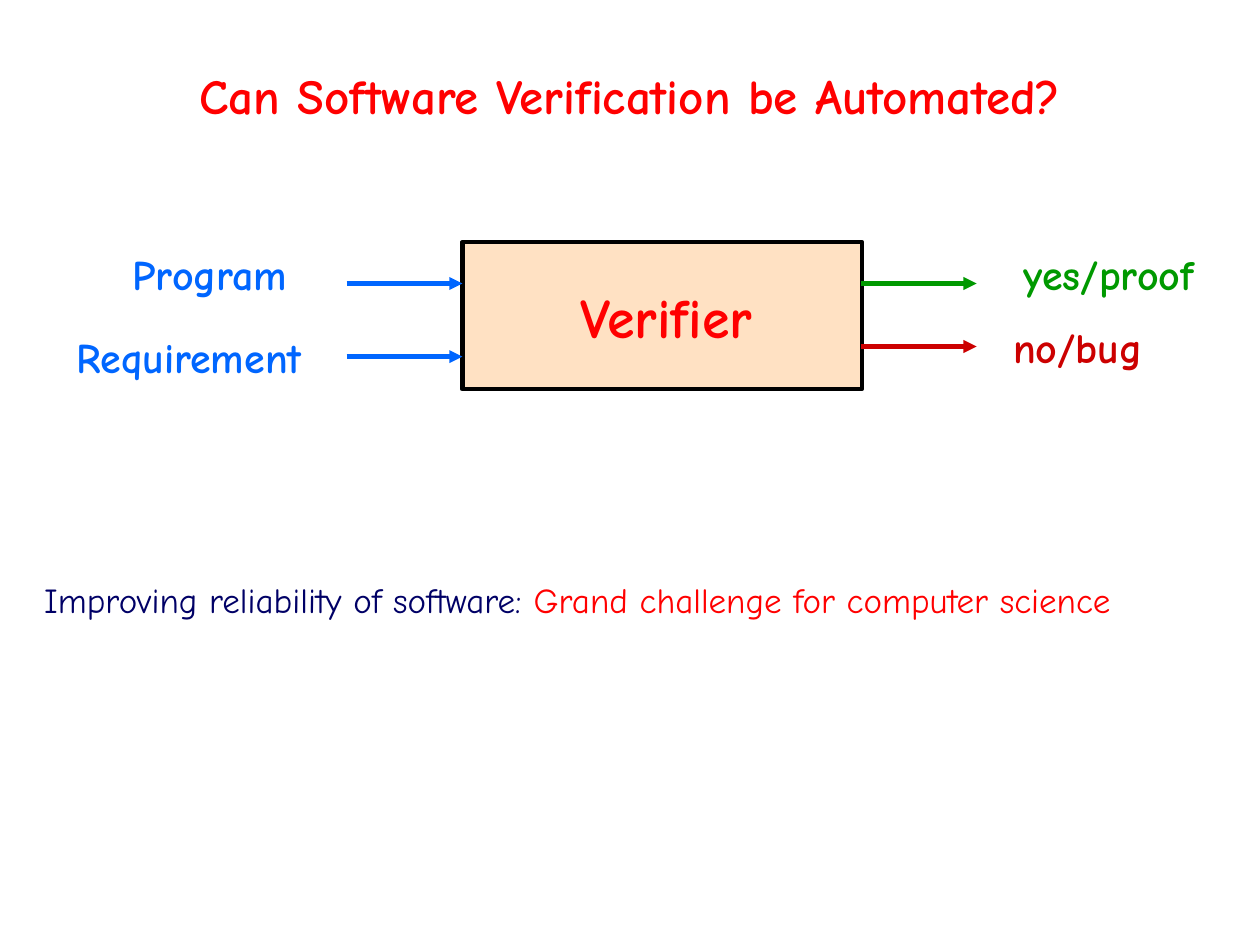
"""Build the slide that shows a verifier with its inputs and outputs."""
from lxml import etree
from pptx import Presentation
from pptx.dml.color import RGBColor
from pptx.enum.shapes import MSO_CONNECTOR, MSO_SHAPE
from pptx.enum.text import MSO_ANCHOR, MSO_AUTO_SIZE, PP_ALIGN
from pptx.oxml.ns import qn
from pptx.util import Inches, Pt

RECTANGLE = MSO_SHAPE.RECTANGLE
STRAIGHT = MSO_CONNECTOR.STRAIGHT
MIDDLE, TOP = MSO_ANCHOR.MIDDLE, MSO_ANCHOR.TOP
CENTER, LEFT = PP_ALIGN.CENTER, PP_ALIGN.LEFT
NO_FIT, GROW = MSO_AUTO_SIZE.NONE, MSO_AUTO_SIZE.SHAPE_TO_FIT_TEXT

FONT = "Comic Neue"
RED = RGBColor(0xFF, 0x00, 0x00)
BLUE = RGBColor(0x00, 0x66, 0xFF)
GREEN = RGBColor(0x00, 0x99, 0x00)
DARK_RED = RGBColor(0xCC, 0x00, 0x00)
NAVY = RGBColor(0x00, 0x00, 0x66)
PEACH = RGBColor(0xFF, 0xCC, 0x99)
BLACK = RGBColor(0x00, 0x00, 0x00)

HEADING = "Can Software Verification be Automated?"
VERIFIER = "Verifier"
CLAIM = [
    ("Improving reliability of software: ", NAVY),
    ("Grand challenge for computer science", RED),
]
VERIFIER_AREA = (3.67, 1.92, 3.17, 1.17)
LINE_WIDTH = Pt(2.5)
ARROW_LENGTH = 0.92
INPUT_X, OUTPUT_X = 2.75, 6.83
LABEL_HEIGHT = 0.5
FLOWS = [
    ("Program", BLUE, 0.92, 1.92, 1.49, INPUT_X, 2.25),
    ("Requirement", BLUE, 0.42, 2.58, 2.16, INPUT_X, 2.83),
    ("yes/proof", GREEN, 7.92, 1.92, 1.76, OUTPUT_X, 2.25),
    ("no/bug", DARK_RED, 7.92, 2.5, 1.27, OUTPUT_X, 2.75),
]


def place(shape, area):
    shape.left, shape.top, shape.width, shape.height = map(Inches, area)


def write(shape, spans, size, bold=True, align=CENTER, anchor=MIDDLE, wrap=True, fit=NO_FIT):
    frame = shape.text_frame
    frame.auto_size = fit
    frame.word_wrap = wrap
    frame.vertical_anchor = anchor
    para = frame.paragraphs[0]
    para.alignment = align
    for text, color in spans:
        span = para.add_run()
        span.text = text
        span.font.name = FONT
        span.font.size = Pt(size)
        span.font.bold = bold
        span.font.color.rgb = color
    return para


def add_label(page, area, text, color, size, wrap, fit):
    label = page.shapes.add_textbox(*map(Inches, area))
    write(label, [(text, color)], size, wrap=wrap, fit=fit)


def add_arrow(page, x, y, color):
    ends = map(Inches, (x, y, x + ARROW_LENGTH, y))
    arrow = page.shapes.add_connector(STRAIGHT, *ends)
    arrow.line.color.rgb = color
    arrow.line.width = LINE_WIDTH
    etree.SubElement(arrow.line._get_or_add_ln(), qn("a:tailEnd"), type="triangle")
    etree.SubElement(arrow._element.spPr, qn("a:effectLst"))


def add_verifier(page):
    box = page.shapes.add_shape(RECTANGLE, *map(Inches, VERIFIER_AREA))
    box.shadow.inherit = False
    box.fill.solid()
    box.fill.fore_color.rgb = PEACH
    color = box._element.spPr.find(qn("a:solidFill"))[0]
    etree.SubElement(color, qn("a:alpha"), val="58000")
    box.line.color.rgb = BLACK
    box.line.width = LINE_WIDTH
    title = page.shapes.title
    title._element.addprevious(box._element)
    place(title, (3.5, 1.92, 3.58, 1.17))
    write(title, [(VERIFIER, RED)], 32)


def add_claim(page):
    body = page.placeholders[1]
    place(body, (0.25, 4.58, 9.75, 2.17))
    para = write(body, CLAIM, 20, bold=False, align=LEFT, anchor=TOP)
    para.line_spacing = 0.9
    para.space_before = Pt(7)
    properties = para._p.get_or_add_pPr()
    properties.set("marL", str(Inches(0.38)))
    properties.set("indent", str(Inches(-0.38)))
    etree.SubElement(properties, qn("a:buNone"))


def main():
    deck = Presentation()
    deck.slide_width, deck.slide_height = Inches(10), Inches(7.5)
    page = deck.slides.add_slide(deck.slide_layouts[1])
    add_verifier(page)
    for text, color, left, top, width, arrow_x, arrow_y in FLOWS:
        add_arrow(page, arrow_x, arrow_y, color)
        add_label(page, (left, top, width, LABEL_HEIGHT), text, color, 24, False, GROW)
    add_label(page, (0, 0.42, 10, 0.67), HEADING, RED, 28, True, NO_FIT)
    add_claim(page)
    deck.save("out.pptx")


if __name__ == "__main__":
    main()
